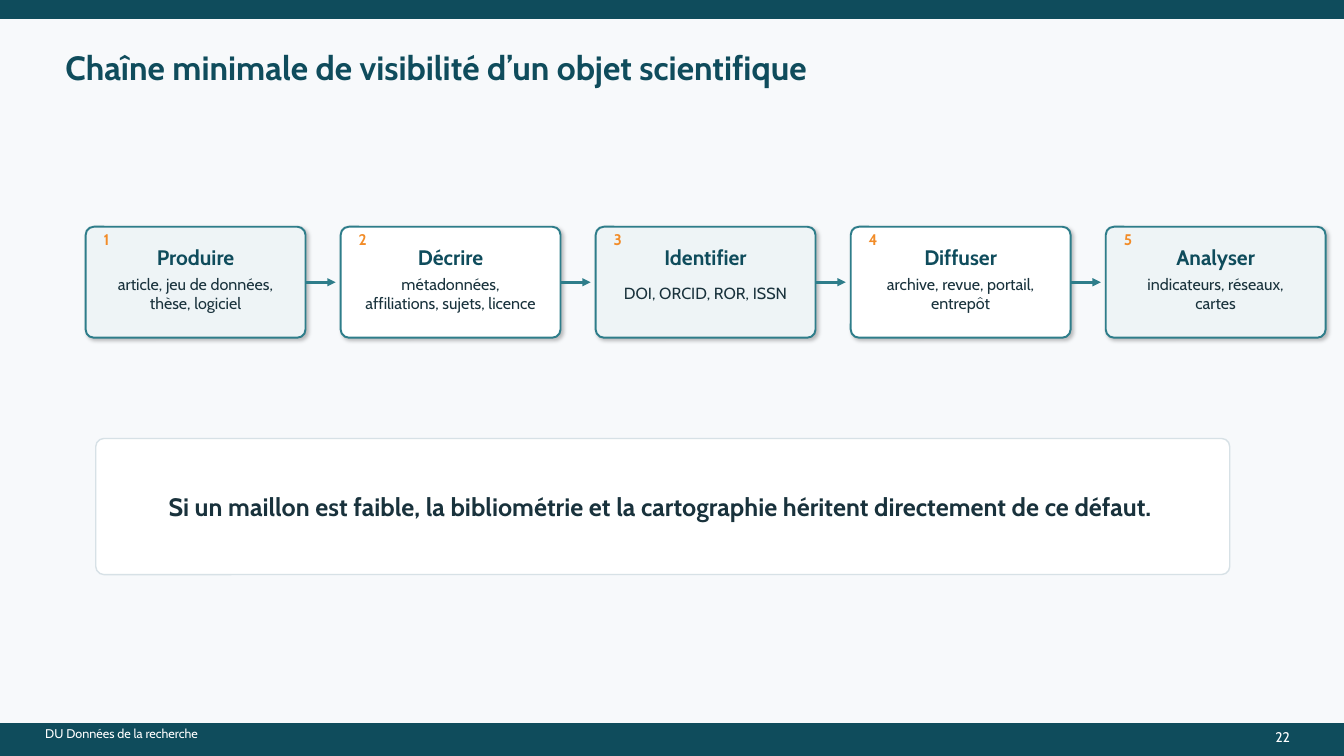
from dataclasses import dataclass

from lxml import etree
from pptx import Presentation
from pptx.dml.color import RGBColor
from pptx.enum import shapes as sh, text as tx
from pptx.oxml import ns
from pptx.util import Pt


@dataclass(frozen=True)
class Theme:
    font: str = "Cabin"
    back: str = "F7F9FB"
    dark: str = "0F4C5C"
    teal: str = "2E7D8A"
    pale: str = "EEF4F6"
    white: str = "FFFFFF"
    ink: str = "19323C"
    edge: str = "D7E1E6"
    accent: str = "F28C28"
    title: float = 24
    claim: float = 18
    head: float = 15
    body: float = 11.5
    mark: float = 11
    page: float = 10
    foot: float = 9


T = Theme()
LEFT, MID, RIGHT = tx.PP_ALIGN.LEFT, tx.PP_ALIGN.CENTER, 3
WIDE, HIGH = 960, 540

# Chain: place and size of the cards, in points
X, Y, W, H, STEP = 61.2, 162, 157, 79.2, 182.16
REACH = 21.6
LINKS = [
    ("Produire", "article, jeu de données, thèse, logiciel"),
    ("Décrire", "métadonnées, affiliations, sujets, licence"),
    ("Identifier", "DOI, ORCID, ROR, ISSN"),
    ("Diffuser", "archive, revue, portail, entrepôt"),
    ("Analyser", "indicateurs, réseaux, cartes"),
]


def rgb(code):
    return RGBColor.from_string(code)


def add_xml(parent, tag, **attrs):
    return etree.SubElement(parent, ns.qn(tag), attrs)


def panel(slide, box, fill, line, width=1, radius=None):
    """Filled rectangle, rounded when a radius is given."""
    kind = sh.MSO_SHAPE.ROUNDED_RECTANGLE if radius else sh.MSO_SHAPE.RECTANGLE
    item = slide.shapes.add_shape(kind, *map(Pt, box))
    if radius:
        item.adjustments[0] = radius
    item.shadow.inherit = False
    item.fill.solid()
    item.fill.fore_color.rgb = rgb(fill)
    item.line.color.rgb = rgb(line)
    item.line.width = Pt(width)
    return item


def shade(item):
    """Soft shadow towards the lower right."""
    effect = item._element.spPr.find(ns.qn("a:effectLst"))
    outer = add_xml(effect, "a:outerShdw", blurRad=str(Pt(3)), dist=str(Pt(2)),
                    dir="2700000", algn="tl", rotWithShape="0")
    color = add_xml(outer, "a:srgbClr", val="000000")
    add_xml(color, "a:alpha", val="25000")


def label(slide, box, words, size, color, bold=False, align=MID,
          anchor=tx.MSO_ANCHOR.MIDDLE, inset=7.2):
    frame = slide.shapes.add_textbox(*map(Pt, box)).text_frame
    frame.word_wrap = True
    frame.vertical_anchor = anchor
    frame.margin_left = frame.margin_right = Pt(inset)
    frame.text = words
    para = frame.paragraphs[0]
    para.alignment = align
    font = para.runs[0].font
    font.name, font.size, font.bold = T.font, Pt(size), bold
    font.color.rgb = rgb(color)


def card(slide, index, head, body):
    """Numbered step of the chain."""
    x = X + index * STEP
    fill = T.white if index % 2 else T.pale
    item = panel(slide, (x, Y, W, H), fill, T.teal, 1.4, 0.073)
    shade(item)
    label(slide, (x + 5.76, Y + 4.32, 20.16, 8.64), str(index + 1),
          T.mark, T.accent, True, LEFT)
    label(slide, (x + 10.8, Y + 12.96, 135.36, 17.28), head,
          T.head, T.dark, True)
    label(slide, (x + 10.08, Y + 33.84, 136.8, 27.36), body,
          T.body, T.ink, inset=6)
    return item


def arrow(slide, start):
    """Arrow from the right side of a card towards the next one."""
    x, y = start.left + start.width, start.top + start.height // 2
    line = slide.shapes.add_connector(sh.MSO_CONNECTOR.STRAIGHT,
                                      x, y, x + Pt(REACH), y)
    line.begin_connect(start, RIGHT)
    line.line.color.rgb = rgb(T.teal)
    line.line.width = Pt(1.8)
    add_xml(line.line._get_or_add_ln(), "a:tailEnd", type="triangle")
    add_xml(line._element.spPr, "a:effectLst")


def main():
    deck = Presentation()
    deck.slide_width, deck.slide_height = Pt(WIDE), Pt(HIGH)
    slide = deck.slides.add_slide(deck.slide_layouts[6])
    slide.background.fill.solid()
    slide.background.fill.fore_color.rgb = rgb(T.back)

    # Bands and title
    for top, high in ((0, 12.96), (516.96, 23.04)):
        panel(slide, (0, top, WIDE, high), T.dark, T.dark)
    label(slide, (39.6, 32.4, 626.4, 30.24),
          "Chaîne minimale de visibilité d’un objet scientifique",
          T.title, T.dark, True, LEFT)

    # Chain
    cards = [card(slide, i, *link) for i, link in enumerate(LINKS)]
    for start in cards[:-1]:
        arrow(slide, start)

    # Key message
    panel(slide, (68.4, 313.2, 810, 97.2), T.white, T.edge, radius=0.059)
    label(slide, (82.8, 339.84, 777.6, 43.2),
          "Si un maillon est faible, la bibliométrie et la cartographie "
          "héritent directement de ce défaut.", T.claim, T.ink, True)

    # Footer
    label(slide, (25.2, 518.4, 244.8, 11.52), "DU Données de la recherche",
          T.foot, T.white, align=LEFT)
    label(slide, (900, 516.96, 32.4, 14.4), "22", T.page, T.white,
          anchor=tx.MSO_ANCHOR.TOP)

    deck.save("out.pptx")


if __name__ == "__main__":
    main()
